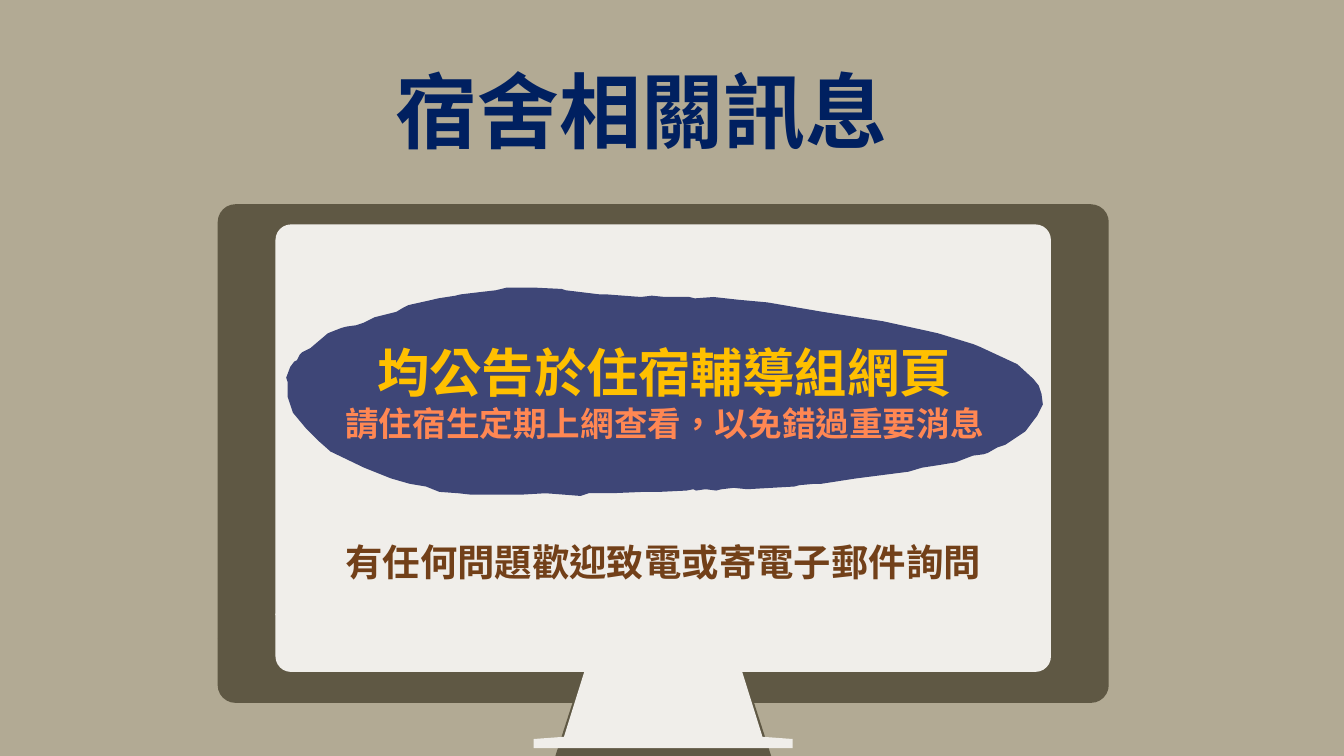
from dataclasses import dataclass

from lxml.etree import SubElement
from pptx import Presentation
from pptx.dml.color import RGBColor
from pptx.enum.shapes import MSO_SHAPE
from pptx.enum.text import MSO_ANCHOR, PP_ALIGN
from pptx.oxml.ns import qn
from pptx.util import Inches, Pt


@dataclass(frozen=True)
class Theme:
    back: str = "B2AA94"
    frame: str = "5F5844"
    screen: str = "F0EEEA"
    brush: str = "3E4677"
    navy: str = "002060"
    gold: str = "FFC000"
    coral: str = "FF8753"
    brown: str = "724019"
    latin: str = "Arial"
    asian: str = "Noto Sans CJK TC"
    note: str = "Noto Sans CJK SC"
    title: int = 44
    lead: int = 28
    sub: int = 18
    foot: int = 20


THEME = Theme()

# Half of the stand's outline, in percent of the monitor's width and height
STAND = [(10.1, 99.5), (12.8, 114.5), (16.7, 115), (16.7, 117)]

# Ragged edge of the brush stroke, in hundredths of an inch from its box
EDGE = [
    (3, 77), (3, 70), (2, 67), (5, 59), (8, 55), (10, 54), (12, 50), (14, 48),
    (20, 45), (33, 34), (43, 30), (47, 29), (54, 28), (60, 26), (68, 22),
    (84, 18), (89, 15), (93, 13), (111, 9), (115, 8), (128, 6), (132, 5),
    (149, 3), (158, 2), (166, 0), (187, 0), (207, 1), (210, 2), (235, 5),
    (240, 5), (266, 7), (274, 6), (284, 7), (294, 7), (302, 7), (306, 8),
    (320, 7), (338, 9), (360, 11), (401, 18), (446, 25), (478, 32), (487, 34),
    (513, 42), (518, 44), (546, 57), (558, 68), (562, 73), (564, 79),
    (565, 87), (561, 95), (552, 107), (537, 117), (531, 119), (524, 123),
    (521, 124), (513, 125), (500, 130), (488, 132), (475, 134), (465, 137),
    (426, 142), (400, 146), (395, 146), (384, 147), (380, 148), (345, 150),
    (335, 149), (326, 150), (322, 151), (314, 150), (307, 151), (305, 150),
    (300, 151), (280, 152), (268, 152), (244, 153), (227, 153), (221, 155),
    (208, 154), (195, 153), (178, 154), (168, 154), (152, 154), (139, 154),
    (130, 153), (116, 152), (111, 150), (106, 148), (94, 146), (80, 142),
    (65, 136), (60, 134), (35, 122), (26, 114), (17, 105), (7, 93), (3, 81),
]


def paint(shape, color):
    shape.shadow.inherit = False
    shape.fill.solid()
    shape.fill.fore_color.rgb = RGBColor.from_string(color)
    shape.line.fill.background()


def outline(shapes, points, color):
    """Draw a closed, filled outline through points given in inches."""
    start, *rest = [(Inches(x), Inches(y)) for x, y in points]
    pen = shapes.build_freeform(*start)
    pen.add_line_segments(rest, close=True)
    shape = pen.convert_to_shape()
    paint(shape, color)
    return shape


def write(para, text, size, color, latin, asian):
    para.alignment = PP_ALIGN.CENTER
    run = para.add_run()
    run.text = text
    font = run.font
    font.size, font.bold, font.name = Pt(size), True, latin
    font.color.rgb = RGBColor.from_string(color)
    props = run._r.get_or_add_rPr()
    props.set("lang", "zh-TW")
    SubElement(props, qn("a:ea")).set("typeface", asian)


def set_up(frame, inset=0.1):
    frame.word_wrap = True
    frame.vertical_anchor = MSO_ANCHOR.MIDDLE
    frame.margin_left = frame.margin_right = Inches(0.1)
    frame.margin_top = frame.margin_bottom = Inches(inset)


def place(shape, box):
    shape.left, shape.top, shape.width, shape.height = map(Inches, box)


def heading(slide, box):
    title = slide.shapes.title
    place(title, box)
    set_up(title.text_frame)
    write(title.text_frame.paragraphs[0], "宿舍相關訊息", THEME.title,
          THEME.navy, THEME.latin, THEME.asian)


def monitor(slide, box, color, lap=0):
    """Group a stand and two halves of a rounded panel that overlap by lap."""
    left, top, wide, high = box
    shapes = slide.shapes.add_group_shape().shapes
    half = [(x * wide / 100, top + y * high / 100) for x, y in STAND]
    mid = left + wide / 2
    outline(shapes, [(mid + x, y) for x, y in half]
            + [(mid - x, y) for x, y in reversed(half)], color)
    seam = 0.87 * high
    curve = 0.02 * wide
    for down, tall, upper in ((0, seam + lap, True),
                              (seam, high - seam, False)):
        part = shapes.add_shape(
            MSO_SHAPE.ROUND_2_SAME_RECTANGLE,
            *map(Inches, (left, top + down, wide, tall)))
        part.adjustments[0] = curve / tall if upper else 0
        part.adjustments[1] = 0 if upper else curve / tall
        paint(part, color)


def notice(slide, box):
    left, top, wide, high = box
    sx, sy = wide / 565, high / 155
    brush = outline(slide.shapes,
                    [(left + x * sx, top + y * sy) for x, y in EDGE],
                    THEME.brush)
    frame = brush.text_frame
    set_up(frame)
    write(frame.paragraphs[0], "均公告於住宿輔導組網頁", THEME.lead,
          THEME.gold, THEME.asian, THEME.asian)
    para = frame.add_paragraph()
    para.line_spacing = Pt(21.5)
    write(para, "請住宿生定期上網查看，以免錯過重要消息", THEME.sub,
          THEME.coral, THEME.asian, THEME.asian)


def footer(slide, box):
    frame = slide.shapes.add_textbox(*map(Inches, box)).text_frame
    set_up(frame, 0.05)
    write(frame.paragraphs[0], "有任何問題歡迎致電或寄電子郵件詢問",
          THEME.foot, THEME.brown, THEME.note, THEME.note)


def main():
    deck = Presentation()
    deck.slide_width, deck.slide_height = Inches(10), Inches(10 * 9 / 16)
    slide = deck.slides.add_slide(deck.slide_layouts[5])
    slide.background.fill.solid()
    slide.background.fill.fore_color.rgb = RGBColor.from_string(THEME.back)
    heading(slide, (0.56, -0.03, 8.43, 1.69))
    monitor(slide, (1.62, 1.52, 6.63, 3.71), THEME.frame)
    monitor(slide, (2.05, 1.67, 5.77, 3.33), THEME.screen, 0.01)
    notice(slide, (2.11, 2.14, 5.65, 1.55))
    footer(slide, (2.05, 3.96, 5.77, 0.44))
    deck.save("out.pptx")


if __name__ == "__main__":
    main()
